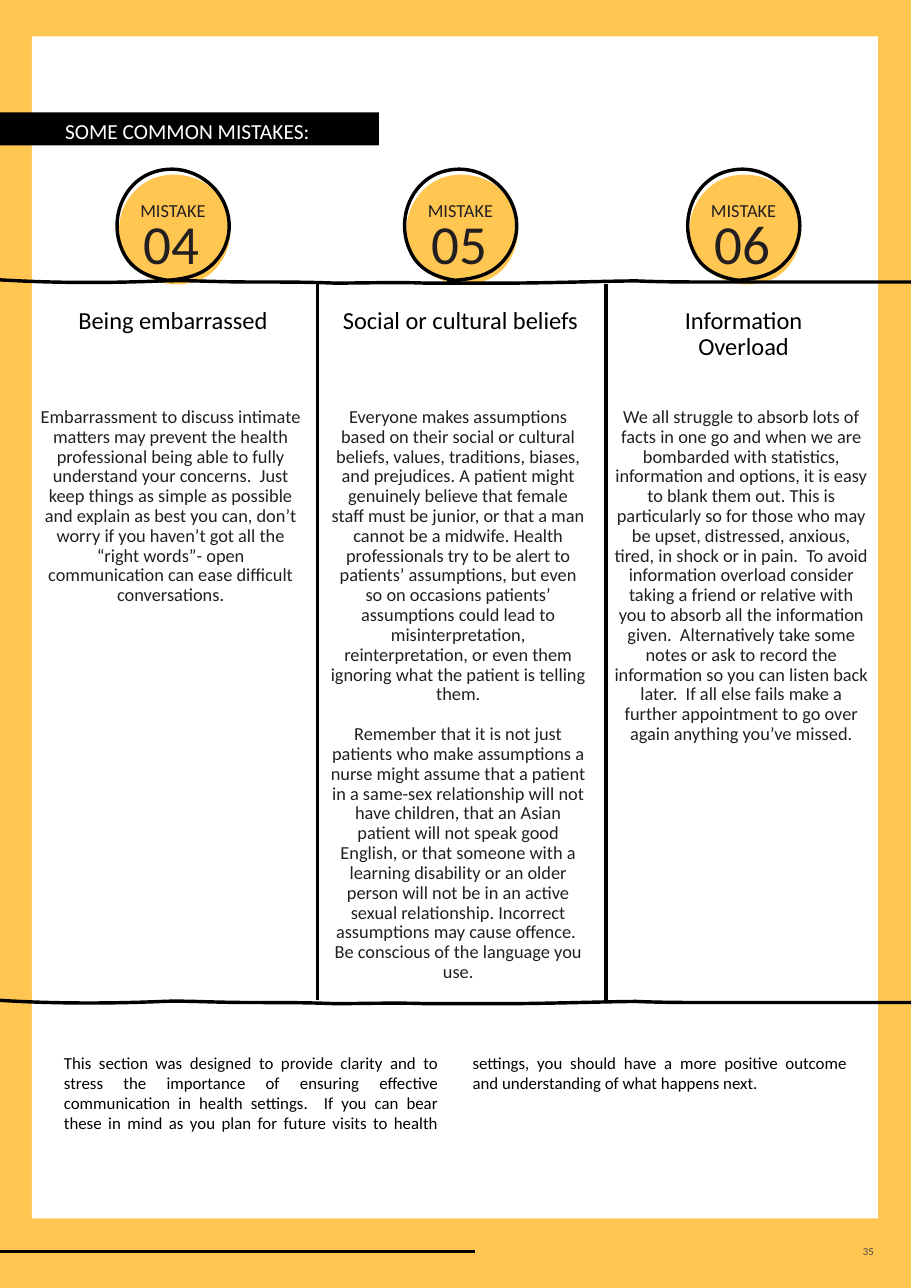
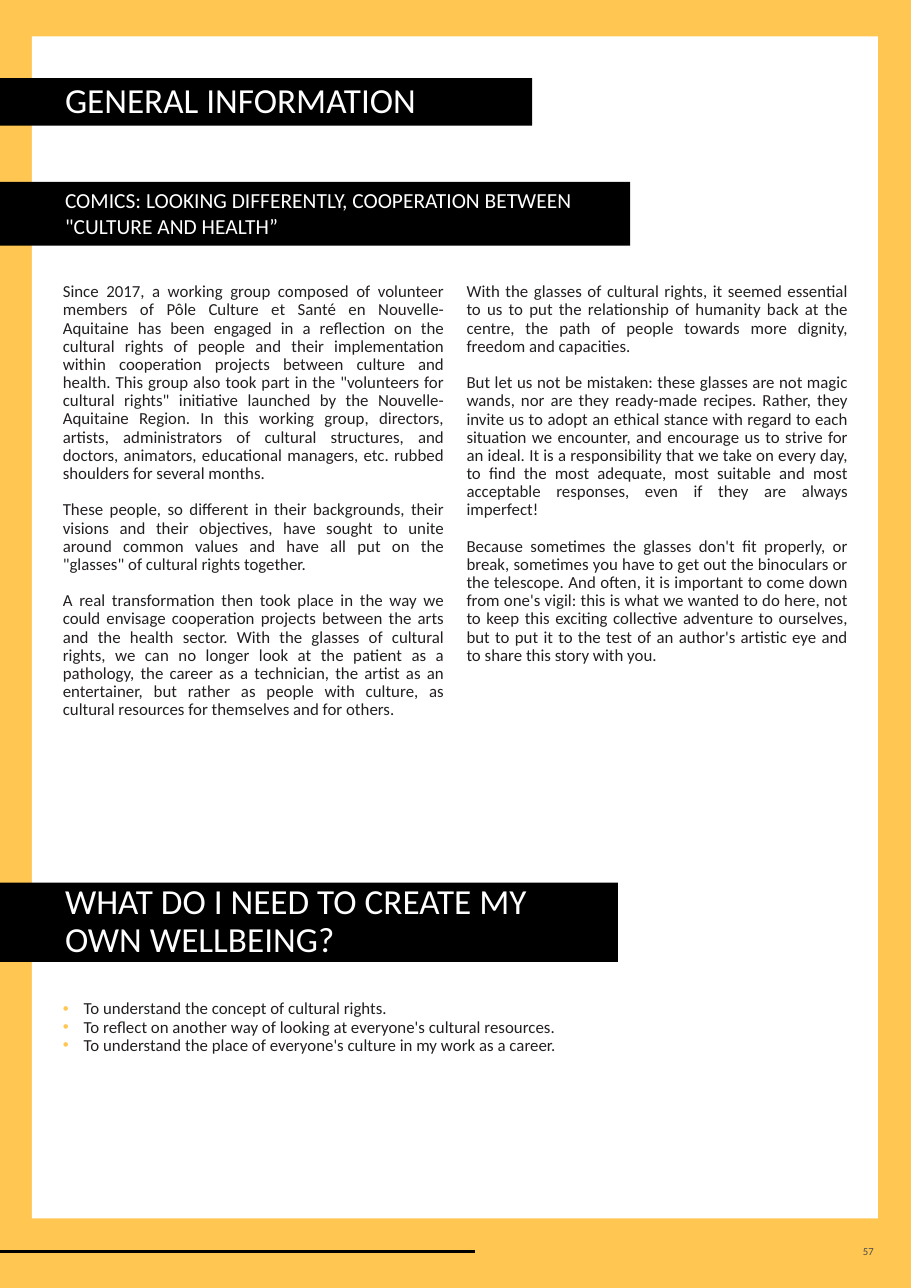
from lxml import etree
from pptx import Presentation
from pptx.dml.color import RGBColor
from pptx.enum import shapes, text
from pptx.oxml.ns import qn
from pptx.util import Inches, Pt

GOLD = RGBColor(0xFF, 0xC6, 0x52)
BLACK = RGBColor(0, 0, 0)
WHITE = RGBColor(0xFF, 0xFF, 0xFF)
INK = RGBColor(0x23, 0x1F, 0x20)
GREY = RGBColor(0x4B, 0x4B, 0x4B)
FONT = "Calibri"
PAGE_W, PAGE_H = 8.27, 11.69
LEFT, CENTER = text.PP_ALIGN.LEFT, text.PP_ALIGN.CENTER
RIGHT, JUSTIFY = text.PP_ALIGN.RIGHT, text.PP_ALIGN.JUSTIFY
TOP, MIDDLE = text.MSO_ANCHOR.TOP, text.MSO_ANCHOR.MIDDLE

# Curves: a start point, then Bezier segments (two handles and an end)
DISC = ((0.17, 0.88), [
    (0.26, 0.96, 0.38, 1.01, 0.5, 1.02), (0.59, 1.03, 0.69, 1.01, 0.78, 0.97),
    (0.94, 0.89, 1.04, 0.7, 1.03, 0.51), (1.03, 0.35, 0.93, 0.19, 0.8, 0.1),
    (0.66, 0.02, 0.48, 0, 0.33, 0.06), (0.18, 0.12, 0.06, 0.27, 0.03, 0.43),
    (0, 0.59, 0.05, 0.77, 0.17, 0.88)])
RING = ((0.39, 1.01), [
    (0.53, 1, 0.67, 0.99, 0.79, 0.92), (0.92, 0.84, 1.01, 0.7, 1.02, 0.54),
    (1.04, 0.2, 0.71, -0.07, 0.38, 0.01), (0.07, 0.08, -0.08, 0.44, 0.05, 0.73),
    (0.13, 0.92, 0.31, 0.99, 0.51, 1.01)])
WAVE = ((0, 0), [
    (0.49, 0.03, 0.98, 0.03, 1.47, 0.01), (1.67, 0, 1.92, 0.02, 2.3, 0.02),
    (2.55, 0.02, 2.79, 0.02, 3.04, 0.03), (3.23, 0.03, 3.63, 0.02, 3.86, 0.03),
    (4.1, 0.03, 4.34, 0.03, 4.57, 0.03), (4.97, 0.03, 5.55, 0.01, 5.78, 0.01),
    (6.01, 0.02, 6.24, 0.02, 6.48, 0.02), (6.67, 0.02, 7.4, 0.02, 7.46, 0.02),
    (7.68, 0.02, 7.9, 0.02, 8.12, 0.02), (8.17, 0.02, 8.22, 0.02, PAGE_W, 0.02)])

# Centre, column size, heading size, number, heading, paragraphs
MISTAKES = [
    (1.57, (2.58, 2.76), (2.58, 0.46), "04", "Being embarrassed", [
        "Embarrassment to discuss intimate matters may prevent the health professional being able "
        "to fully understand your concerns.  Just keep things as simple as possible and explain as "
        "best you can, don’t worry if you haven’t got all the “right words”- open communication "
        "can ease difficult conversations."]),
    (4.18, (2.52, 5.46), (2.6, 0.46), "05", "Social or cultural beliefs", [
        "Everyone makes assumptions based on their social or cultural beliefs, values, traditions, "
        "biases, and prejudices. A patient might genuinely believe that female staff must be "
        "junior, or that a man cannot be a midwife. Health professionals try to be alert to "
        "patients’ assumptions, but even so on occasions patients’ assumptions could lead to "
        "misinterpretation, reinterpretation, or even them ignoring what the patient is telling "
        "them.",
        "Remember that it is not just patients who make assumptions a nurse might assume that a "
        "patient in a same-sex relationship will not have children, that an Asian patient will not "
        "speak good English, or that someone with a learning disability or an older person will "
        "not be in an active sexual relationship. Incorrect assumptions may cause offence.  Be "
        "conscious of the language you use."]),
    (6.75, (2.52, 3.67), (1.82, 0.6), "06", "Information Overload", [
        "We all struggle to absorb lots of facts in one go and when we are bombarded with "
        "statistics, information and options, it is easy to blank them out. This is particularly "
        "so for those who may be upset, distressed, anxious, tired, in shock or in pain.  To avoid "
        "information overload consider taking a friend or relative with you to absorb all the "
        "information given.  Alternatively take some notes or ask to record the information so you "
        "can listen back later.  If all else fails make a further appointment to go over again "
        "anything you’ve missed."]),
]
CLOSING = [
    "This section was designed to provide clarity and to stress the importance of ensuring "
    "effective communication in health settings.  If you can bear these in mind as you plan for "
    "future visits to health settings, you should have a more positive outcome and understanding "
    "of what happens next."]
ARTICLE = [
    "Since 2017, a working group composed of volunteer members of Pôle Culture et Santé en "
    "Nouvelle-Aquitaine has been engaged in a reflection on the cultural rights of people and "
    "their implementation within cooperation projects between culture and health. This group also "
    "took part in the \"volunteers for cultural rights\" initiative launched by the "
    "Nouvelle-Aquitaine Region. In this working group, directors, artists, administrators of "
    "cultural structures, and doctors, animators, educational managers, etc. rubbed shoulders for "
    "several months.",
    "These people, so different in their backgrounds, their visions and their objectives, have "
    "sought to unite around common values and have all put on the \"glasses\" of cultural rights "
    "together.",
    "A real transformation then took place in the way we could envisage cooperation projects "
    "between the arts and the health sector. With the glasses of cultural rights, we can no longer "
    "look at the patient as a pathology, the career as a technician, the artist as an entertainer, "
    "but rather as people with culture, as cultural resources for themselves and for others.",
    "With the glasses of cultural rights, it seemed essential to us to put the relationship of "
    "humanity back at the centre, the path of people towards more dignity, freedom and capacities.",
    "But let us not be mistaken: these glasses are not magic wands, nor are they ready-made "
    "recipes. Rather, they invite us to adopt an ethical stance with regard to each situation we "
    "encounter, and encourage us to strive for an ideal. It is a responsibility that we take on "
    "every day, to find the most adequate, most suitable and most acceptable responses, even if "
    "they are always imperfect!",
    "Because sometimes the glasses don't fit properly, or break, sometimes you have to get out the "
    "binoculars or the telescope. And often, it is important to come down from one's vigil: this "
    "is what we wanted to do here, not to keep this exciting collective adventure to ourselves, "
    "but to put it to the test of an author's artistic eye and to share this story with you."]
NEEDS = [
    "To understand the concept of cultural rights.",
    "To reflect on another way of looking at everyone's cultural resources.",
    "To understand the place of everyone's culture in my work as a career."]


def place(shape, box):
    shape.left, shape.top, shape.width, shape.height = [Inches(v) for v in box]


def set_bullet(paragraph, bulleted):
    props = paragraph._p.get_or_add_pPr()
    indent = Inches(0.19) if bulleted else 0
    props.set("marL", str(indent))
    props.set("indent", str(-indent))
    if bulleted:
        colour = etree.SubElement(props, qn("a:buClr"))
        etree.SubElement(colour, qn("a:srgbClr")).set("val", str(GOLD))
        etree.SubElement(props, qn("a:buChar")).set("char", "•")
    else:
        etree.SubElement(props, qn("a:buNone"))


def write(shape, paragraphs, size, color, align, spacing=0.9, anchor=TOP, gaps=None, bulleted=False):
    """Fill a shape with paragraphs; gaps maps a paragraph index to its space after."""
    frame = shape.text_frame
    frame.word_wrap = True
    frame.auto_size = text.MSO_AUTO_SIZE.NONE
    frame.vertical_anchor = anchor
    for i, words in enumerate(paragraphs):
        p = frame.paragraphs[0] if i == 0 else frame.add_paragraph()
        p.text = words
        set_bullet(p, bulleted)
        p.alignment, p.line_spacing = align, spacing
        p.space_before, p.space_after = Pt(0), Pt((gaps or {}).get(i, 0))
        p.font.size, p.font.name, p.font.color.rgb = Pt(size), FONT, color


def add_text(parent, box, *args, **options):
    label = parent.add_textbox(*[Inches(v) for v in box])
    write(label, *args, **options)


def set_columns(shape, gap):
    body = shape.element.txBody.bodyPr
    body.set("numCol", "2")
    body.set("spcCol", str(Inches(gap)))


def add_rect(slide, box, color):
    rect = slide.shapes.add_shape(shapes.MSO_SHAPE.RECTANGLE, *[Inches(v) for v in box])
    rect.shadow.inherit = False
    rect.fill.solid()
    rect.fill.fore_color.rgb = color
    rect.line.fill.background()
    return rect


def add_line(slide, x1, y1, x2, y2, width):
    line = slide.shapes.add_connector(
        shapes.MSO_CONNECTOR.STRAIGHT, *[Inches(v) for v in (x1, y1, x2, y2)])
    line.line.color.rgb, line.line.width = BLACK, Pt(width)
    etree.SubElement(line.element.spPr, qn("a:effectLst"))
    return line


def add_curve(parent, curve, left, top, fill=None):
    """Draw Bezier segments, filled and closed or as an open black stroke."""
    start, segments = curve
    builder = parent.build_freeform(Inches(left + start[0]), Inches(top + start[1]))
    builder.add_line_segments(
        [(Inches(left + s[4]), Inches(top + s[5])) for s in segments], close=fill is not None)
    outline = builder.convert_to_shape()
    # Turn each straight segment into a Bezier, in the outline's own coordinates
    dx, dy = Inches(left) - outline.left, Inches(top) - outline.top
    for step, segment in zip(outline.element.xpath(".//a:lnTo"), segments):
        step.tag = qn("a:cubicBezTo")
        step.remove(step[0])
        for x, y in zip(segment[::2], segment[1::2]):
            point = etree.SubElement(step, qn("a:pt"))
            point.set("x", str(Inches(x) + dx))
            point.set("y", str(Inches(y) + dy))
    outline.shadow.inherit = False
    if fill is None:
        outline.fill.background()
        outline.line.color.rgb, outline.line.width = BLACK, Pt(2.25)
    else:
        outline.fill.solid()
        outline.fill.fore_color.rgb = fill
        outline.line.fill.background()


def banner(slide, box, words, size, title=False, **options):
    """Black band bleeding off the left edge; the title placeholder or a rectangle."""
    if title:
        band = slide.shapes.title
        place(band, box)
        band.fill.solid()
        band.fill.fore_color.rgb = BLACK
    else:
        band = add_rect(slide, box, BLACK)
    write(band, [words], size, WHITE, LEFT, **options)
    band.text_frame.margin_left = Inches(0.59)


def master_frame(prs, slide):
    """Draw the gold frame and footer rule, then hand them to the master."""
    parts = [add_rect(slide, (0, -0.02, PAGE_W, 11.71), GOLD),
             add_rect(slide, (0.29, 0.33, 7.68, 10.73), WHITE),
             add_line(slide, 0, 11.36, 4.31, 11.36, 1.5)]
    for i, part in enumerate(parts):
        part.element.xpath(".//p:cNvPr")[0].set("id", str(100 + i))
        prs.slide_master.shapes.element.insert(2 + i, part.element)


def page_number(slide, number):
    add_text(slide.shapes, (6.95, 11.28, 1.08, 0.16), [number], 7, GREY, RIGHT,
             spacing=1, anchor=MIDDLE)


def badge(slide, left, top, number):
    group = slide.shapes.add_group_shape().shapes
    add_curve(group, DISC, left, top + 0.02, fill=GOLD)
    add_text(group, (left - 0.02, top + 0.36, 1.04, 0.68), [number], 36, INK, CENTER, anchor=MIDDLE)
    add_text(group, (left, top + 0.26, 1.02, 0.24), ["MISTAKE"], 12, INK, CENTER, anchor=MIDDLE)
    add_curve(group, RING, left, top)


def mistake_column(slide, top, centre, size, head_size, number, heading, paragraphs):
    add_text(slide.shapes, (centre - 0.02 - size[0] / 2, top + 2.11, *size), paragraphs,
             12, INK, CENTER, gaps={0: 13} if len(paragraphs) > 1 else None)
    add_text(slide.shapes, (centre - head_size[0] / 2, top + 1.21, *head_size), [heading],
             16, BLACK, CENTER)
    badge(slide, centre - 0.51, top, number)


def mistakes_page(slide):
    banner(slide, (0, 1.02, 3.44, 0.3), "SOME COMMON MISTAKES:", 14, title=True, spacing=1)
    for mistake in MISTAKES:
        mistake_column(slide, 1.54, *mistake)
    # Column dividers between two hand-drawn rules
    for x in (2.88, 5.5):
        add_line(slide, x, 2.58, x, 9.08, 2.25)
    for y in (2.54, 9.08):
        add_curve(slide.shapes, WAVE, 0, y)
    closing = slide.placeholders[1]
    place(closing, (0.48, 9.5, 7.31, 0.87))
    write(closing, CLOSING, 11, BLACK, JUSTIFY, spacing=1)
    set_columns(closing, 0.31)
    page_number(slide, "35")


def information_page(slide):
    banner(slide, (0, 0.71, 4.83, 0.43), "GENERAL INFORMATION", 23, title=True, anchor=MIDDLE)
    banner(slide, (0, 1.65, 5.72, 0.58),
           "COMICS: LOOKING DIFFERENTLY, COOPERATION BETWEEN \"CULTURE AND HEALTH”", 14, spacing=1)
    banner(slide, (0, 8.01, 5.61, 0.72), "WHAT DO I NEED TO CREATE MY OWN WELLBEING?", 23,
           anchor=MIDDLE)
    article, needs = slide.placeholders[1], slide.placeholders[2]
    place(article, (0.47, 2.52, 7.33, 4.12))
    write(article, ARTICLE, 11, INK, JUSTIFY, gaps=dict.fromkeys((0, 1, 3, 4), 11.9))
    set_columns(article, 0.2)
    place(needs, (0.47, 9.03, 7.32, 0.72))
    write(needs, NEEDS, 11, INK, JUSTIFY, bulleted=True)
    page_number(slide, "57")


def main():
    prs = Presentation()
    prs.slide_width, prs.slide_height = Inches(PAGE_W), Inches(PAGE_H)
    mistakes = prs.slides.add_slide(prs.slide_layouts[1])
    information = prs.slides.add_slide(prs.slide_layouts[3])
    master_frame(prs, mistakes)
    mistakes_page(mistakes)
    information_page(information)
    prs.save("out.pptx")


if __name__ == "__main__":
    main()
